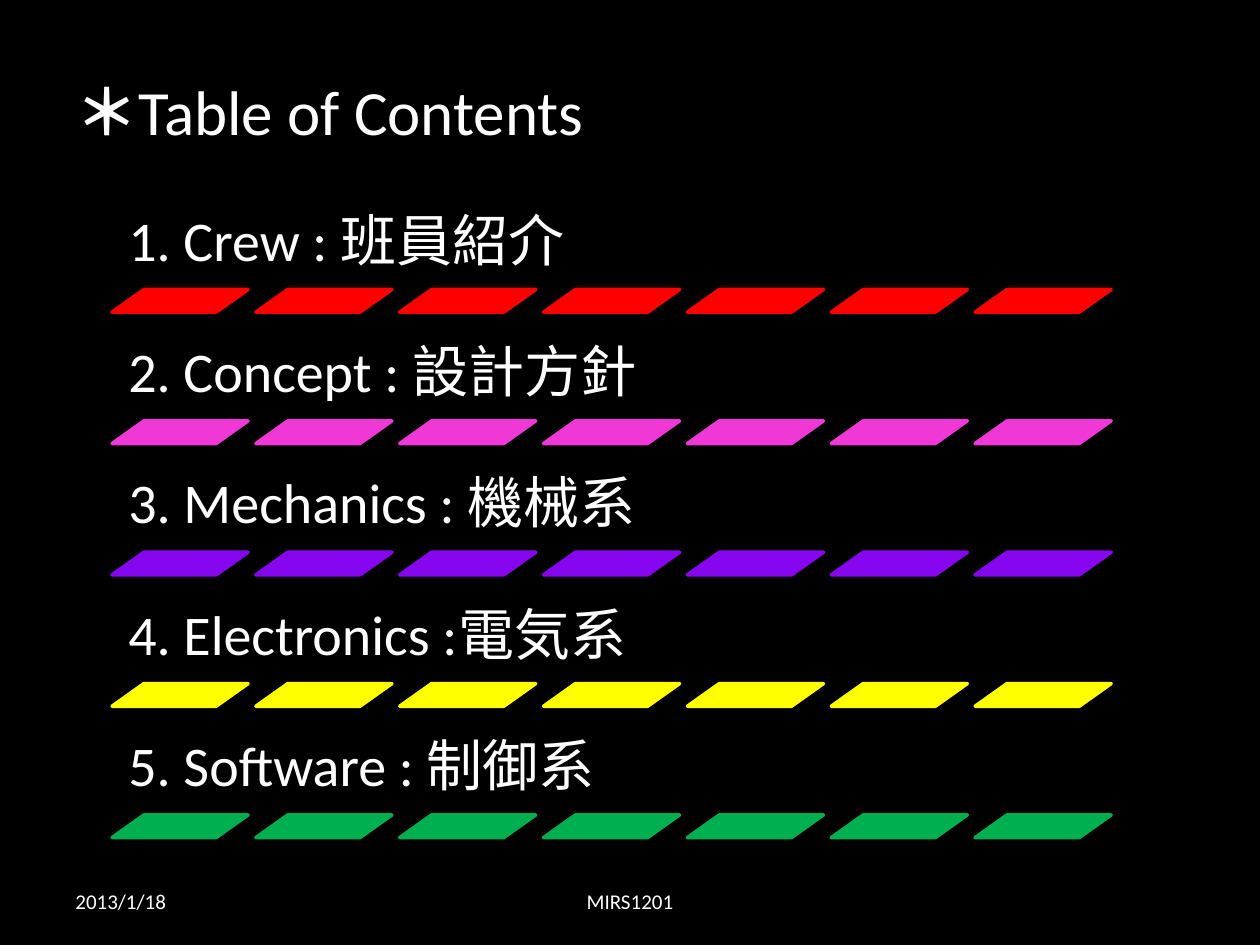
import pptx
import pptx.util
import pptx.dml.color
import pptx.enum.shapes
import pptx.enum.text

Pt = pptx.util.Pt
ANCHOR = pptx.enum.text.MSO_ANCHOR
ALIGN = pptx.enum.text.PP_ALIGN

SECTIONS = [
    ("1. Crew : 班員紹介", "FF0000"),
    ("2. Concept : 設計方針", "F038D6"),
    ("3. Mechanics : 機械系", "8606F0"),
    ("4. Electronics :電気系", "FFFF00"),
    ("5. Software : 制御系", "00B050"),
]
SECTION_PITCH = 75.06
BAR_COUNT = 7


def color(value):
    """Return the colour for a hex string."""
    return pptx.dml.color.RGBColor.from_string(value)


def set_values(target, values):
    """Set each attribute of the target from a dict."""
    for name, value in values.items():
        setattr(target, name, value)


def add_text(slide, box, runs, size, frame_values, paragraph_values):
    """Add a text box holding one paragraph of (text, bold) runs."""
    shape = slide.shapes.add_textbox(*map(Pt, box))
    set_values(shape.text_frame, {"word_wrap": True, **frame_values})
    paragraph = shape.text_frame.paragraphs[0]
    set_values(paragraph, paragraph_values)
    for text, bold in runs:
        run = paragraph.add_run()
        run.text = text
        set_values(run.font, {"name": "Calibri", "size": Pt(size), "bold": bold})
        run.font.color.rgb = color("FFFFFF")


def add_title(slide, box):
    """Add the title with its bold asterisk."""
    runs = [("＊", True), ("Table of Contents", False)]
    add_text(slide, box, runs, 36, {"vertical_anchor": ANCHOR.MIDDLE}, {})


def add_bar(slide, box, fill):
    """Add one slanted bar in a single colour."""
    shape = slide.shapes.add_shape(
        pptx.enum.shapes.MSO_SHAPE.PARALLELOGRAM, *map(Pt, box))
    shape.adjustments[0] = 1.408
    shape.shadow.inherit = False
    shape.fill.solid()
    shape.fill.fore_color.rgb = color(fill)
    shape.line.color.rgb = color(fill)
    shape.line.width = Pt(2)


def add_section(slide, box, text, fill):
    """Add a contents entry above its row of bars."""
    left, top, width, height = box
    bar_height = 12.96
    text_height = height - bar_height
    margins = ("margin_left", "margin_top", "margin_right", "margin_bottom")
    frame_values = {name: Pt(9.36) for name in margins}
    frame_values["vertical_anchor"] = ANCHOR.BOTTOM
    add_text(slide, (left, top, width, text_height), [(text, False)], 32,
             frame_values, {"line_spacing": 0.9})
    for index in range(BAR_COUNT):
        bar_left = left + index * 82.2
        add_bar(slide, (bar_left, top + text_height, 77.76, bar_height), fill)


def add_footer(slide, box):
    """Add the date at the left and the team name in the centre."""
    left, top, width, height = box
    name_width = 228
    name_left = left + (width - name_width) / 2
    entries = [
        ("2013/1/18", left, 168, ALIGN.LEFT),
        ("MIRS1201", name_left, name_width, ALIGN.CENTER),
    ]
    for text, text_left, text_width, alignment in entries:
        add_text(slide, (text_left, top, text_width, height), [(text, False)], 12,
                 {"vertical_anchor": ANCHOR.MIDDLE}, {"alignment": alignment})


def main():
    """Build and save the contents slide."""
    presentation = pptx.Presentation()
    set_values(presentation, {"slide_width": Pt(720), "slide_height": Pt(540)})
    slide = presentation.slides.add_slide(presentation.slide_layouts[6])
    slide.background.fill.solid()
    slide.background.fill.fore_color.rgb = color("000000")
    add_title(slide, (36, 37.44, 648, 51.12))
    for index, (text, fill) in enumerate(SECTIONS):
        top = 112.4 + index * SECTION_PITCH
        add_section(slide, (64, top, 582.5, 66), text, fill)
    add_footer(slide, (36, 500.5, 648, 28.75))
    presentation.save("out.pptx")


if __name__ == "__main__":
    main()
